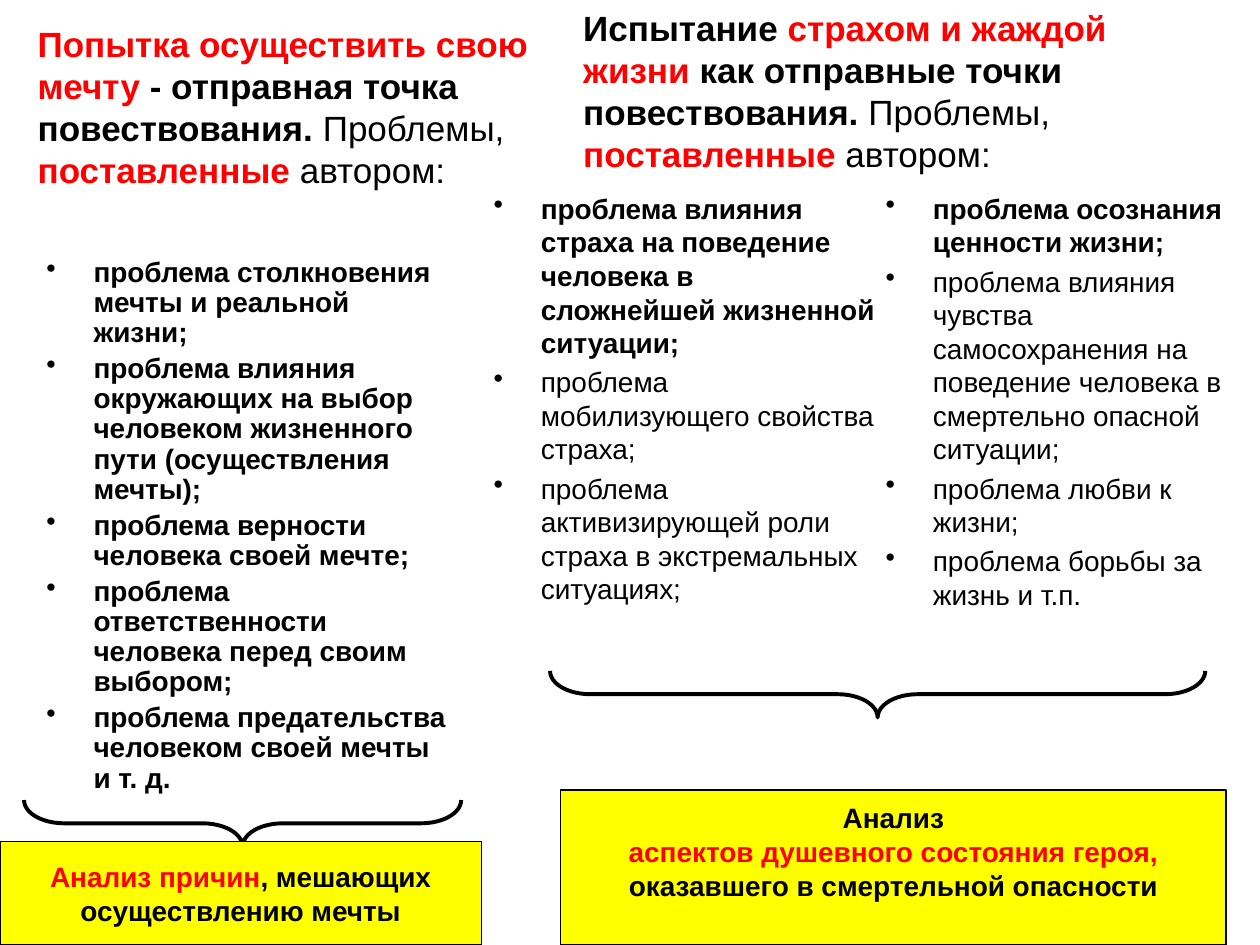
from lxml import etree
from pptx import Presentation
from pptx.dml.color import RGBColor
from pptx.enum.shapes import MSO_SHAPE
from pptx.enum.text import MSO_ANCHOR, PP_ALIGN
from pptx.oxml.ns import qn
from pptx.util import Pt

RECT, BRACE = MSO_SHAPE.RECTANGLE, MSO_SHAPE.RIGHT_BRACE
TOP, MIDDLE = MSO_ANCHOR.TOP, MSO_ANCHOR.MIDDLE
CENTER = PP_ALIGN.CENTER
BLACK, RED, YELLOW = "000000", "FF0000", "FFFF00"
FONT = "Arial"
INDENT = 27

# A run is (text, colour, bold); a box is (left, top, width, height).
TAIL = [
    ("Проблемы, ", BLACK, False),
    ("поставленные", RED, True),
    (" автором:", BLACK, False),
]
HEADS = [
    ((14.4, 21.6, 334.8, 78.5), MIDDLE, [
        ("Попытка осуществить свою мечту ", RED, True),
        ("- отправная точка повествования. ", BLACK, True),
    ]),
    ((326.2, 0, 357.8, 65.5), TOP, [
        ("Испытание ", BLACK, True),
        ("страхом и жаждой жизни ", RED, True),
        ("как отправные точки повествования. ", BLACK, True),
    ]),
]

# Box, line spacing, number of leading bold items, items
LISTS = [
    ((19.4, 144, 244, 324), 0.9, 5, [
        "проблема столкновения мечты и реальной жизни;",
        "проблема влияния окружающих на выбор человеком жизненного пути "
        "(осуществления мечты);",
        "проблема верности человека своей мечте;",
        "проблема ответственности человека перед своим выбором;",
        "проблема предательства человеком своей мечты и т. д.",
    ]),
    ((275, 105.8, 232.6, 254.9), 1, 1, [
        "проблема влияния страха на поведение человека в сложнейшей "
        "жизненной ситуации;",
        "проблема мобилизующего свойства страха;",
        "проблема активизирующей роли страха в экстремальных ситуациях;",
    ]),
    ((499, 105.8, 221, 260.6), 1, 1, [
        "проблема осознания ценности жизни;",
        "проблема влияния чувства самосохранения на поведение человека "
        "в смертельно опасной ситуации;",
        "проблема любви к жизни;",
        "проблема борьбы за жизнь и т.п.",
    ]),
]

# Centre x, centre y, span
BRACES = [(138.6, 470.5, 249.8), (501.5, 396.7, 374.4)]
DEPTH = 26.6

# Box, bottom inset, lines of runs
RESULTS = [
    ((0, 481, 275, 59), 3.6, [
        [("Анализ причин", RED, True), (", мешающих", BLACK, True)],
        [("осуществлению мечты", BLACK, True)],
    ]),
    ((320.4, 451.4, 380.2, 88.6), 22, [
        [("Анализ", BLACK, True)],
        [("аспектов душевного состояния героя,", RED, True)],
        [("оказавшего в смертельной опасности", BLACK, True)],
    ]),
]


def color(code):
    return RGBColor.from_string(code)


def place(box):
    return [Pt(n) for n in box]


def write(frame, lines, size, anchor=TOP):
    """Fill a text frame with one paragraph per list of runs."""
    frame.word_wrap = True
    frame.vertical_anchor = anchor
    for i, runs in enumerate(lines):
        para = frame.add_paragraph() if i else frame.paragraphs[0]
        for text, code, bold in runs:
            run = para.add_run()
            run.text = text
            font = run.font
            font.name, font.size, font.bold = FONT, Pt(size), bold
            font.color.rgb = color(code)


def bullet(para):
    props = para._p.get_or_add_pPr()
    props.set("marL", str(Pt(INDENT)))
    props.set("indent", str(-Pt(INDENT)))
    etree.SubElement(props, qn("a:buChar")).set("char", "•")


def outline(shape, width):
    shape.shadow.inherit = False
    shape.line.color.rgb = color(BLACK)
    shape.line.width = Pt(width)


def main():
    deck = Presentation()
    deck.slide_width, deck.slide_height = Pt(720), Pt(540)
    shapes = deck.slides.add_slide(deck.slide_layouts[6]).shapes

    for box, anchor, runs in HEADS:
        frame = shapes.add_textbox(*place(box)).text_frame
        write(frame, [runs + TAIL], 20, anchor)

    for box, space, strong, items in LISTS:
        frame = shapes.add_textbox(*place(box)).text_frame
        write(frame, [[(t, BLACK, i < strong)] for i, t in enumerate(items)], 16)
        for i, para in enumerate(frame.paragraphs):
            para.line_spacing = space
            para.space_before = Pt(3.2 if i else 0)
            bullet(para)

    for x, y, span in BRACES:
        box = (x - DEPTH / 2, y - span / 2, DEPTH, span)
        brace = shapes.add_shape(BRACE, *place(box))
        brace.rotation = 90
        brace.adjustments[0] = 0.86
        brace.fill.background()
        outline(brace, 2.25)

    for box, inset, lines in RESULTS:
        rect = shapes.add_shape(RECT, *place(box))
        rect.fill.solid()
        rect.fill.fore_color.rgb = color(YELLOW)
        outline(rect, 0.75)
        frame = rect.text_frame
        frame.margin_bottom = Pt(inset)
        write(frame, lines, 16, MIDDLE)
        for para in frame.paragraphs:
            para.alignment = CENTER

    deck.save("out.pptx")


if __name__ == "__main__":
    main()
